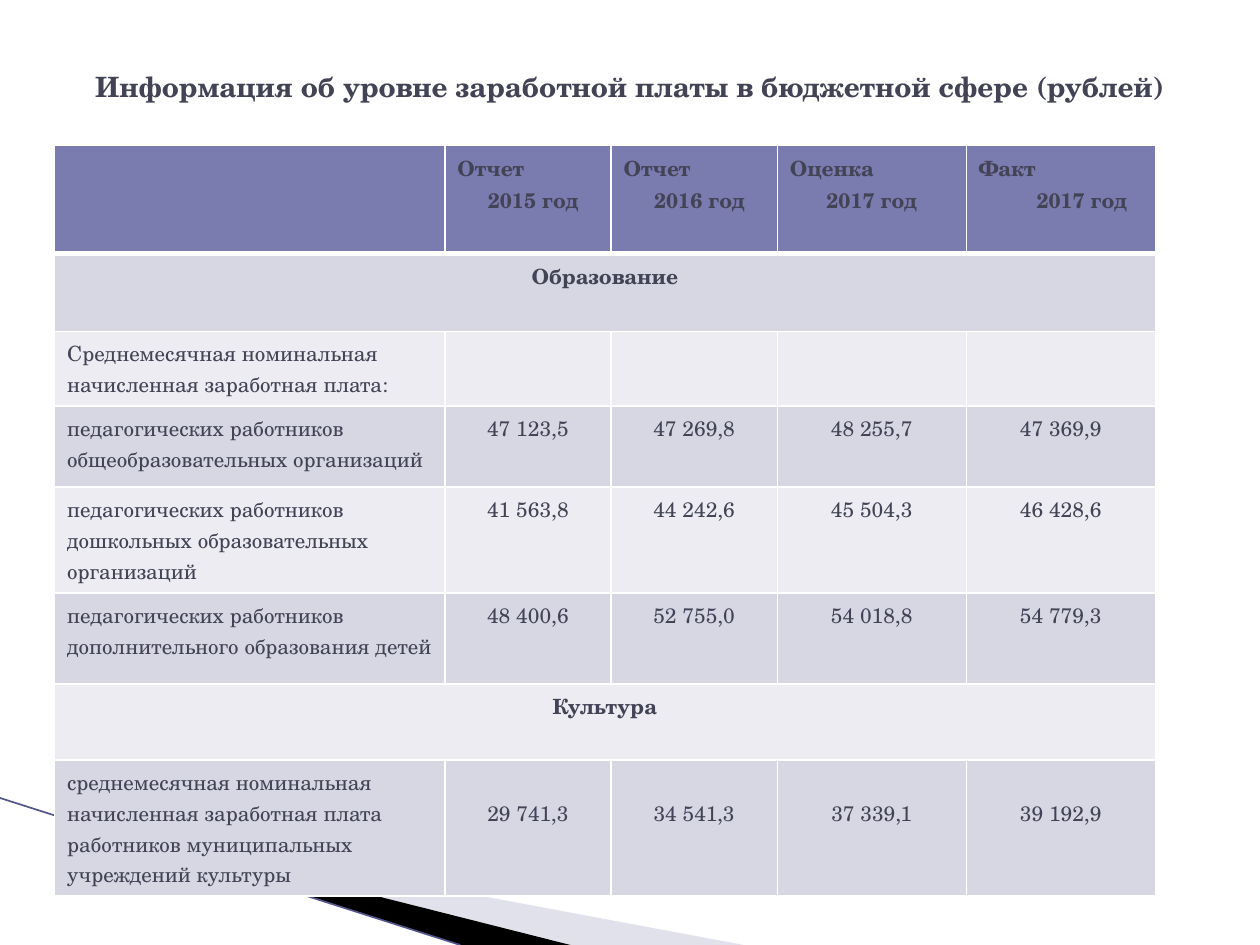
from lxml import etree
from pptx import Presentation
from pptx.dml.color import RGBColor as RGB
from pptx.enum.shapes import MSO_CONNECTOR as CONN
from pptx.enum.text import MSO_ANCHOR as ANCHOR, PP_ALIGN as ALIGN
from pptx.oxml.ns import qn
from pptx.util import Pt

FONT = "TeX Gyre Schola"
INK = RGB(0x42, 0x44, 0x56)
HEAD = RGB(0x7A, 0x7B, 0xAE)
DARK = RGB(0xD7, 0xD7, 0xE3)
PALE = RGB(0xEC, 0xEC, 0xF2)
LILAC = RGB(0xB6, 0xB6, 0xD1)
EDGE = RGB(0x53, 0x54, 0x8A)
BLACK = RGB(0, 0, 0)
WHITE = RGB(0xFF, 0xFF, 0xFF)

TITLE = "Информация об уровне заработной платы в бюджетной сфере (рублей)"
# Word, year and the indent of the year line
YEARS = [("Отчет", "2015 год", 6), ("Отчет", "2016 год", 6),
         ("Оценка", "2017 год", 0), ("Факт", "2017 год", 24)]
# A row with one entry is a section heading across the table
ROWS = [
    ["Образование"],
    ["Среднемесячная номинальная начисленная заработная плата:", "", "", "", ""],
    ["педагогических работников общеобразовательных организаций",
     "47 123,5", "47 269,8", "48 255,7", "47 369,9"],
    ["педагогических работников дошкольных образовательных организаций",
     "41 563,8", "44 242,6", "45 504,3", "46 428,6"],
    ["педагогических работников дополнительного образования детей",
     "48 400,6", "52 755,0", "54 018,8", "54 779,3"],
    ["Культура"],
    ["среднемесячная номинальная начисленная заработная плата работников "
     "муниципальных учреждений культуры",
     "29 741,3", "34 541,3", "37 339,1", "39 192,9"],
]
WIDTHS = [223, 95, 95, 108, 108]
HEIGHTS = [62, 44.5, 42.3, 46.3, 60.5, 52, 43.5, 77]


def write(para, text, size=12, bold=False, align=ALIGN.LEFT):
    para.alignment = align
    run = para.add_run()
    run.text = text
    font = run.font
    font.name, font.size, font.bold = FONT, Pt(size), bold
    font.color.rgb = INK


def border(cell, last=1):
    """Draw white edges; last is the width of the bottom one."""
    props = cell._tc.get_or_add_tcPr()
    for spot, (tag, width) in enumerate(
            [("a:lnL", 1), ("a:lnR", 1), ("a:lnT", 1), ("a:lnB", last)]):
        line = etree.Element(qn(tag), w=str(Pt(width)))
        fill = etree.SubElement(line, qn("a:solidFill"))
        etree.SubElement(fill, qn("a:srgbClr"), val=str(WHITE))
        props.insert(spot, line)


def paint(cell, color, last=1):
    cell.fill.solid()
    cell.fill.fore_color.rgb = color
    border(cell, last)


def wedge(slide, x, y, points, color, alpha=None):
    pts = [(Pt(x + dx), Pt(y + dy)) for dx, dy in points]
    pen = slide.shapes.build_freeform(*pts[0])
    pen.add_line_segments(pts[1:], close=True)
    shape = pen.convert_to_shape()
    shape.shadow.inherit = False
    shape.line.fill.background()
    shape.fill.solid()
    shape.fill.fore_color.rgb = color
    if alpha:
        tint = shape._element.spPr.find(".//" + qn("a:srgbClr"))
        etree.SubElement(tint, qn("a:alpha"), val=str(alpha * 1000))


def add_decor(slide, x, y, w, h):
    """Draw the folded corner at the foot of the slide."""
    wedge(slide, x, y, [(39.6, 12), (w, h), (326, h)], LILAC, 40)
    wedge(slide, x, y, [(38.2, 11.3), (326, h), (263, h)], BLACK)
    line = slide.shapes.add_connector(
        CONN.STRAIGHT, Pt(x), Pt(y), Pt(x + 263), Pt(y + h))
    line.line.color.rgb = EDGE
    line.line.width = Pt(0.95)
    etree.SubElement(line._element.spPr, qn("a:effectLst"))


def add_title(slide, x, y, w, h):
    title = slide.shapes.title
    title.left, title.top, title.width, title.height = map(Pt, (x, y, w, h))
    frame = title.text_frame
    frame.vertical_anchor = ANCHOR.MIDDLE
    write(frame.paragraphs[0], TITLE, 16, True, ALIGN.CENTER)


def fill_head(table):
    paint(table.cell(0, 0), HEAD, 3)
    for col, (word, year, indent) in enumerate(YEARS, 1):
        cell = table.cell(0, col)
        paint(cell, HEAD, 3)
        frame = cell.text_frame
        first, second = frame.paragraphs[0], frame.add_paragraph()
        second._p.get_or_add_pPr().set("marL", str(Pt(indent)))
        write(first, word, bold=True)
        write(second, year, bold=True, align=ALIGN.CENTER)


def fill_row(table, row, texts):
    section = len(texts) == 1
    for cell in table.rows[row].cells:
        paint(cell, DARK if row % 2 else PALE)
    if section:
        table.cell(row, 0).merge(table.cell(row, len(WIDTHS) - 1))
    for col, text in enumerate(texts):
        if not text:
            continue
        cell = table.cell(row, col)
        write(cell.text_frame.paragraphs[0], text, bold=section,
              align=ALIGN.CENTER if section or col else ALIGN.LEFT)
        if col and row == len(ROWS):
            cell.margin_top = Pt(21.3)


def add_pay(slide, x, y):
    """Add the table of pay by group and year."""
    table = slide.shapes.add_table(
        len(HEIGHTS), len(WIDTHS), Pt(x), Pt(y),
        Pt(sum(WIDTHS)), Pt(sum(HEIGHTS))).table
    for col, width in zip(table.columns, WIDTHS):
        col.width = Pt(width)
    for row, height in zip(table.rows, HEIGHTS):
        row.height = Pt(height)
    fill_head(table)
    for row, texts in enumerate(ROWS, 1):
        fill_row(table, row, texts)


def main():
    deck = Presentation()
    deck.slide_width, deck.slide_height = Pt(720), Pt(540)
    slide = deck.slides.add_slide(deck.slide_layouts[5])
    add_decor(slide, 0, 456, 425, 84)
    add_pay(slide, 31.2, 83)
    add_title(slide, 36, 21.6, 648, 55.4)
    deck.save("out.pptx")


if __name__ == "__main__":
    main()
